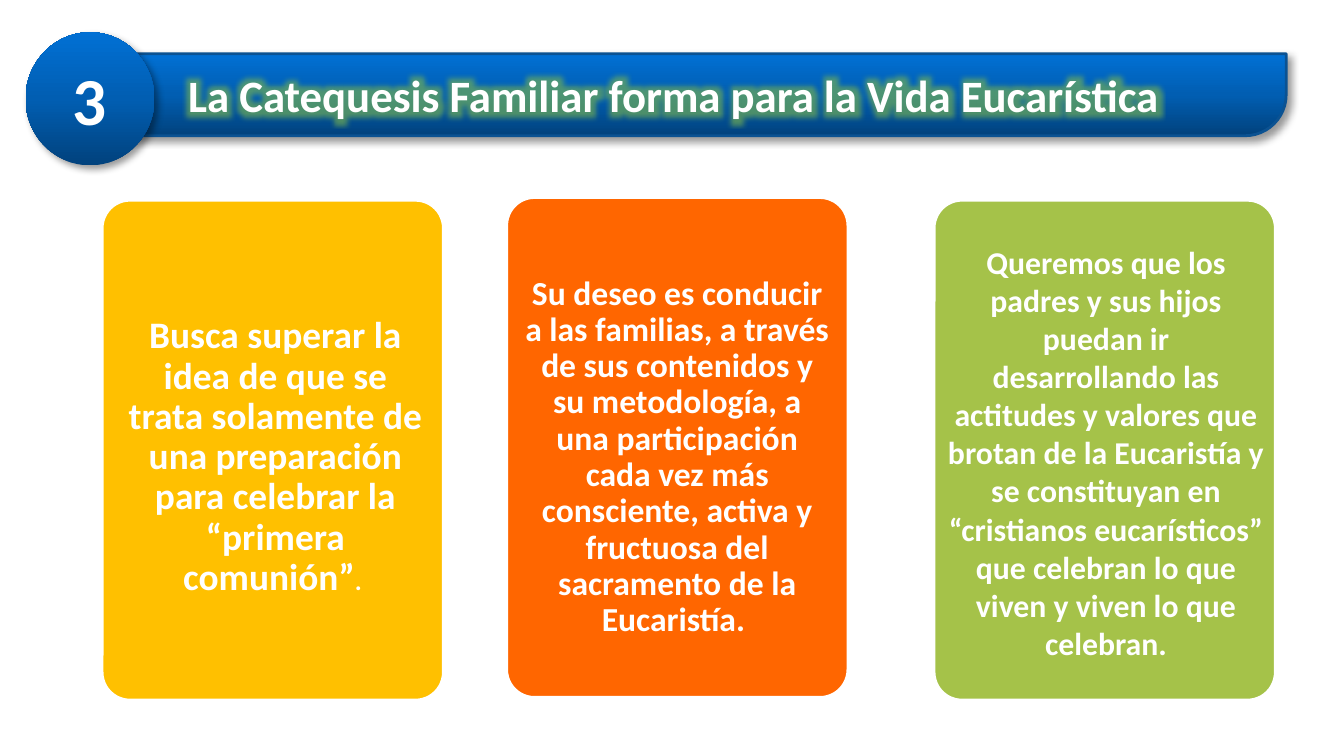
from lxml.etree import SubElement
from pptx import Presentation
from pptx.dml.color import RGBColor
from pptx.enum.shapes import MSO_SHAPE
from pptx.enum.text import MSO_ANCHOR, PP_ALIGN
from pptx.oxml import parse_xml
from pptx.oxml.ns import nsdecls, qn
from pptx.util import Inches, Pt

TITLE = "La Catequesis Familiar forma para la Vida Eucarística"
NUMBER = "3"
WHITE = "FFFFFF"
BLUES = [(0, "01427D"), (50, "015EB2"), (100, "0170D4")]
WIDTH = 10
CARD_W, CARD_H = 2.56, 3.74

# left, top, fill, line spacing, insets (left, top, right, bottom), runs
CARDS = [
    (0.75, 1.48, "FFC000", 0.9, (0.11, 0.11, 0.07, 0),
     [("Busca superar la idea de que se trata solamente de una preparación "
       "para celebrar la “primera comunión”", 20), (". ", 14)]),
    (3.76, 1.46, "FF6600", 0.9, (0.08, 0.15, 0.08, 0),
     [("Su deseo es conducir a las familias, a través de sus contenidos y su "
       "metodología, a una participación cada vez más consciente, activa y "
       "fructuosa del sacramento de la Eucaristía. ", 18)]),
    (6.94, 1.48, "A5C249", 1.0, (0.05, 0.03, 0.03, 0),
     [("Queremos que los padres y sus hijos puedan ir desarrollando las "
       "actitudes y valores que brotan de la Eucaristía y se constituyan en "
       "“cristianos eucarísticos” que celebran lo que viven y viven lo que "
       "celebran.", 17)]),
]


def color(code):
    return RGBColor.from_string(code)


def add_shape(kind, *box):
    shape = slide.shapes.add_shape(kind, *map(Inches, box))
    shape.shadow.inherit = False
    return shape


def write(shape, runs, align, insets=(0, 0, 0, 0), spacing=1.0):
    frame = shape.text_frame
    frame.word_wrap = True
    frame.vertical_anchor = MSO_ANCHOR.MIDDLE
    (frame.margin_left, frame.margin_top,
     frame.margin_right, frame.margin_bottom) = map(Inches, insets)
    para = frame.paragraphs[0]
    para.alignment = align
    para.line_spacing = spacing
    for text, size in runs:
        run = para.add_run()
        run.text = text
        run.font.name = "Calibri"
        run.font.size = Pt(size)
        run.font.bold = True
        run.font.color.rgb = color(WHITE)


def shade(shape):
    """Give a shape the blue gradient, dark at the bottom, and a soft shadow."""
    stops = "".join(f'<a:gs pos="{pos * 1000}"><a:srgbClr val="{code}"/></a:gs>'
                    for pos, code in BLUES)
    props = shape._element.spPr
    props.find(qn("a:prstGeom")).addnext(parse_xml(
        f'<a:gradFill {nsdecls("a")} rotWithShape="1"><a:gsLst>{stops}</a:gsLst>'
        '<a:lin ang="16200000" scaled="0"/></a:gradFill>'))
    cast = SubElement(props.find(qn("a:effectLst")), qn("a:outerShdw"),
                      blurRad=str(Pt(4)), dist=str(Pt(3)), dir="2700000",
                      algn="tl", rotWithShape="0")
    tint = SubElement(cast, qn("a:srgbClr"), val="000000")
    SubElement(tint, qn("a:alpha"), val="40000")


def glow(run, code, size, alpha):
    fill = run._r.rPr.find(qn("a:solidFill"))
    fill.addnext(parse_xml(
        f'<a:effectLst {nsdecls("a")}><a:glow rad="{Pt(size)}">'
        f'<a:srgbClr val="{code}"><a:alpha val="{alpha * 1000}"/></a:srgbClr>'
        '</a:glow></a:effectLst>'))


deck = Presentation()
deck.slide_width, deck.slide_height = Inches(WIDTH), Inches(WIDTH * 9 / 16)
slide = deck.slides.add_slide(deck.slide_layouts[5])

for left, top, fill, spacing, insets, runs in CARDS:
    card = add_shape(MSO_SHAPE.ROUNDED_RECTANGLE, left, top, CARD_W, CARD_H)
    card.adjustments[0] = 0.085
    card.fill.solid()
    card.fill.fore_color.rgb = color(fill)
    card.line.color.rgb = color(WHITE)
    card.line.width = Pt(3)
    write(card, runs, PP_ALIGN.CENTER, insets, spacing)

bar = add_shape(MSO_SHAPE.ROUND_2_DIAG_RECTANGLE, 0.53, 0.4, 9.04, 0.61)
bar.adjustments[0], bar.adjustments[1] = 0.5, 0
bar.line.color.rgb = color("0B5292")
bar.line.width = Pt(1.5)
shade(bar)

badge = add_shape(MSO_SHAPE.OVAL, 0.19, 0.24, 0.96, 0.99)
badge.line.fill.background()
shade(badge)
write(badge, [(NUMBER, 36)], PP_ALIGN.CENTER)

title = slide.shapes.title
title.left, title.top, title.width, title.height = map(
    Inches, (1.4, 0.4, 8, 0.61))
write(title, [(TITLE, 24)], PP_ALIGN.LEFT)
glow(title.text_frame.paragraphs[0].runs[0], "7FB84A", 11, 60)
slide.shapes._spTree.append(title._element)  # bring in front of the bar

deck.save("out.pptx")
